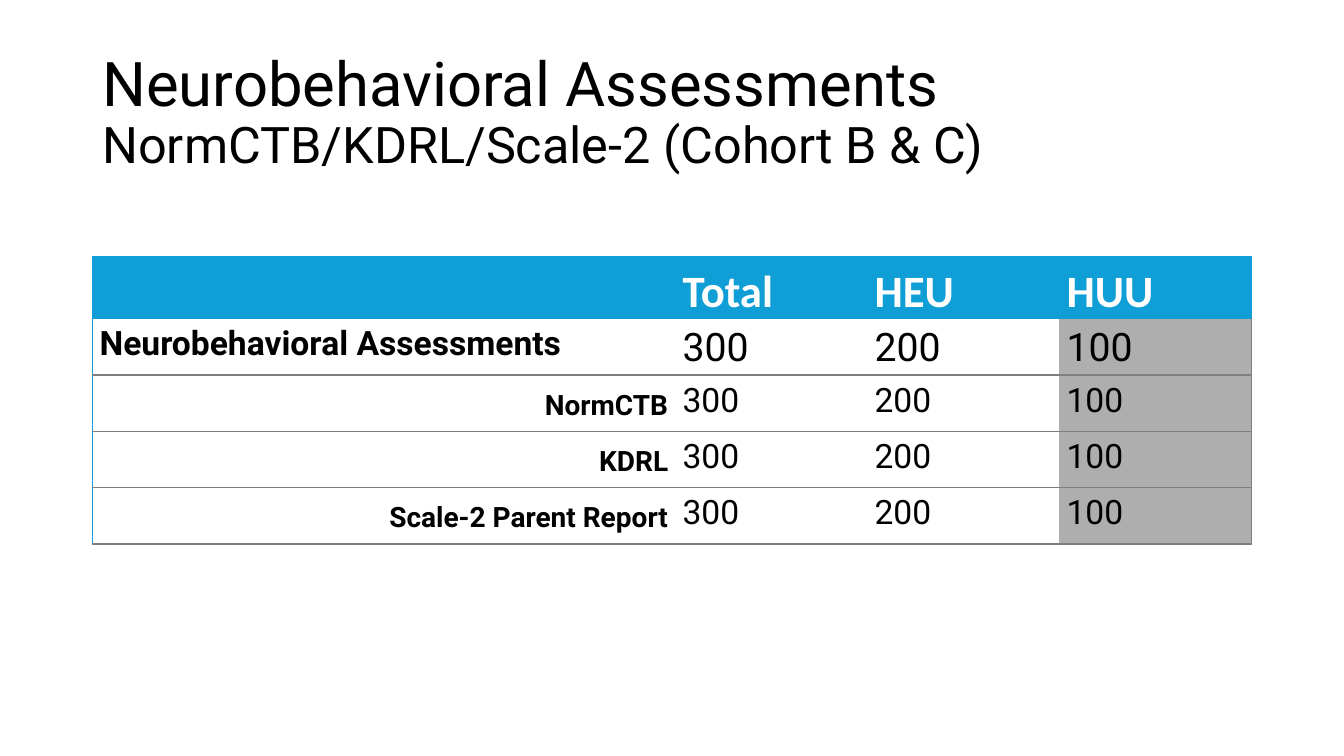
import pptx
import pptx.util
import pptx.dml.color
import pptx.enum.text
import pptx.oxml
import pptx.oxml.ns
from pptx.util import Cm

BLUE = pptx.dml.color.RGBColor(0x0F, 0x9E, 0xD5)
GREY = pptx.dml.color.RGBColor(0xAE, 0xAE, 0xAE)
RULE = pptx.dml.color.RGBColor(0x7F, 0x7F, 0x7F)
WHITE = pptx.dml.color.RGBColor(0xFF, 0xFF, 0xFF)
BLACK = pptx.dml.color.RGBColor(0, 0, 0)

TITLE_LINES = [("Neurobehavioral Assessments", 44),
               ("NormCTB/KDRL/Scale-2 (Cohort B & C)", 36)]
HEADINGS = ["", "Total", "HEU", "HUU"]
ASSESSMENTS = ["Neurobehavioral Assessments", "NormCTB", "KDRL", "Scale-2 Parent Report"]
COUNTS = ["300", "200", "100"]
COLUMN_WIDTHS = [14.69, 4.84, 4.84, 4.84]
ROW_HEIGHTS = [1.47, 1.42, 1.42, 1.42, 1.42]


def style_run(run, font_name, size, color, bold=False):
    run.font.name = font_name
    run.font.size = pptx.util.Pt(size)
    run.font.color.rgb = color
    run.font.bold = bold


def add_title(slide, left, top, width, height):
    text_frame = slide.shapes.add_textbox(left, top, width, height).text_frame
    text_frame.word_wrap = True
    text_frame.vertical_anchor = pptx.enum.text.MSO_ANCHOR.MIDDLE
    paragraph = text_frame.paragraphs[0]
    paragraph.text = "\v".join(line for line, size in TITLE_LINES)
    paragraph.line_spacing = 0.9
    for run, (line, size) in zip(paragraph.runs, TITLE_LINES):
        style_run(run, "Roboto", size, BLACK)


def set_borders(cell, **colors):
    """Draw the sides L, R, T and B in the given colours; None hides a side."""
    properties = cell._tc.get_or_add_tcPr()
    for side in "LRTB":
        color = colors.get(side)
        fill = (f'<a:solidFill><a:srgbClr val="{color}"/></a:solidFill>'
                if color is not None else "<a:noFill/>")
        properties.append(pptx.oxml.parse_xml(
            f'<a:ln{side} {pptx.oxml.ns.nsdecls("a")} w="12700">{fill}</a:ln{side}>'))


def fill_cell(cell, text, font_name, size, color, bold):
    cell.margin_left = cell.margin_right = Cm(0.18)
    cell.margin_top = cell.margin_bottom = 0
    cell.text = text
    paragraph = cell.text_frame.paragraphs[0]
    paragraph.line_spacing = 1.15
    for run in paragraph.runs:
        style_run(run, font_name, size, color, bold)


def set_background(cell, color):
    cell.fill.solid()
    cell.fill.fore_color.rgb = color


def fill_heading_row(table):
    last = len(HEADINGS) - 1
    for column, heading in enumerate(HEADINGS):
        cell = table.cell(0, column)
        fill_cell(cell, heading, "Calibri", 32, WHITE, True)
        set_borders(cell, T=BLUE, B=BLUE, L=BLUE if column == 0 else None,
                    R=BLUE if column == last else None)
        set_background(cell, BLUE)


def fill_assessment_row(table, row, assessment):
    """The first row is the overall count; the others are its parts."""
    overall = row == 1
    last = len(COUNTS)
    for column, text in enumerate([assessment] + COUNTS):
        cell = table.cell(row, column)
        is_name = column == 0
        size = (24 if overall else 20) if is_name else (28 if overall else 24)
        fill_cell(cell, text, "Roboto", size, BLACK, is_name)
        if is_name and not overall:
            cell.vertical_anchor = pptx.enum.text.MSO_ANCHOR.MIDDLE
            cell.text_frame.paragraphs[0].alignment = pptx.enum.text.PP_ALIGN.RIGHT
        set_borders(cell, T=BLUE if overall else RULE, B=RULE,
                    L=BLUE if is_name else None, R=RULE if column == last else None)
        set_background(cell, GREY if column == last else WHITE)


def add_assessment_table(slide, left, top, width, height):
    table = slide.shapes.add_table(len(ROW_HEIGHTS), len(COLUMN_WIDTHS),
                                   left, top, width, height).table
    table.first_row = table.horz_banding = False
    for column, column_width in zip(table.columns, COLUMN_WIDTHS):
        column.width = Cm(column_width)
    for row, row_height in zip(table.rows, ROW_HEIGHTS):
        row.height = Cm(row_height)
    fill_heading_row(table)
    for row, assessment in enumerate(ASSESSMENTS, start=1):
        fill_assessment_row(table, row, assessment)


def main():
    presentation = pptx.Presentation()
    presentation.slide_width = Cm(33.87)
    presentation.slide_height = Cm(19.05)
    slide = presentation.slides.add_slide(presentation.slide_layouts[6])
    add_title(slide, Cm(2.33), Cm(1.02), Cm(29.21), Cm(3.68))
    add_assessment_table(slide, Cm(2.33), Cm(6.47),
                         Cm(sum(COLUMN_WIDTHS)), Cm(sum(ROW_HEIGHTS)))
    presentation.save("out.pptx")


if __name__ == "__main__":
    main()
